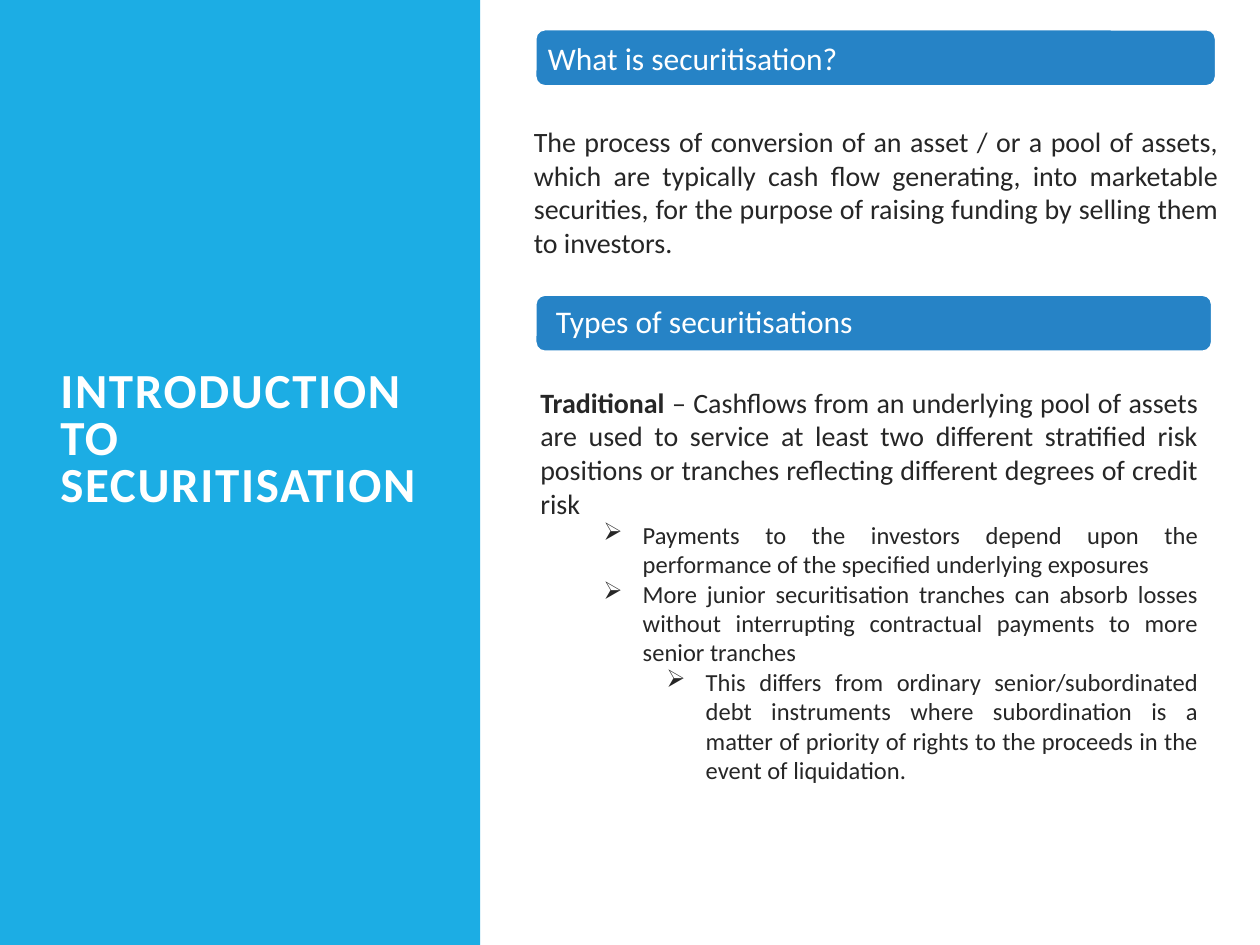
from dataclasses import dataclass

from lxml.etree import SubElement
from pptx import Presentation
from pptx.dml.color import RGBColor
from pptx.enum.shapes import MSO_SHAPE as Preset
from pptx.enum.text import MSO_ANCHOR as Anchor, PP_ALIGN as Align
from pptx.oxml.ns import qn
from pptx.util import Pt


@dataclass(frozen=True)
class Theme:
    font: str = "Calibri"
    panel: RGBColor = RGBColor(0x1C, 0xAD, 0xE4)
    bar: RGBColor = RGBColor(0x26, 0x83, 0xC6)
    light: RGBColor = RGBColor(0xFF, 0xFF, 0xFF)
    dark: RGBColor = RGBColor(0x26, 0x26, 0x26)
    title_size: int = 28
    heading_size: int = 18
    body_size: int = 16
    bullet_size: int = 14


THEME = Theme()
BULLET_HANG = 22.5

DEFINITION = (
    "The process of conversion of an asset / or a pool of assets, which are typically "
    "cash flow generating, into marketable securities, for the purpose of raising funding "
    "by selling them to investors."
)
TRADITIONAL = (
    "Traditional",
    " – Cashflows from an underlying pool of assets are used to service at least two "
    "different stratified risk positions or tranches reflecting different degrees of credit risk",
)
# Each bullet: level, left indent in points, text
BULLETS = [
    (1, 58.5, "Payments to the investors depend upon the performance of the specified "
              "underlying exposures"),
    (1, 58.5, "More junior securitisation tranches can absorb losses without interrupting "
              "contractual payments to more senior tranches"),
    (2, 94.5, "This differs from ordinary senior/subordinated debt instruments where "
              "subordination is a matter of priority of rights to the proceeds in the event "
              "of liquidation."),
]


def add_block(slide, preset, box, fill, line=None):
    shape = slide.shapes.add_shape(preset, *map(Pt, box))
    shape.shadow.inherit = False
    shape.fill.solid()
    shape.fill.fore_color.rgb = fill
    if line is None:
        shape.line.fill.background()
    else:
        shape.line.color.rgb = line
        shape.line.width = Pt(1.25)


def add_text_frame(slide, box, anchor=Anchor.TOP):
    text_frame = slide.shapes.add_textbox(*map(Pt, box)).text_frame
    text_frame.word_wrap = True
    text_frame.vertical_anchor = anchor
    return text_frame


def add_run(paragraph, text, size, color, bold=False):
    run = paragraph.add_run()
    run.text = text
    font = run.font
    font.name, font.size, font.bold = THEME.font, Pt(size), bold
    font.color.rgb = color
    return run


def set_bullet(paragraph, level, indent):
    paragraph.level = level
    properties = paragraph._p.get_or_add_pPr()
    properties.set("marL", str(Pt(indent)))
    properties.set("indent", str(-Pt(BULLET_HANG)))
    SubElement(properties, qn("a:buChar"), char="➢")


def add_title_panel(slide, box):
    left, top, width, height = box
    add_block(slide, Preset.RECTANGLE, box, THEME.panel)
    text_box = (left + 27.4, top + 33, width - 51, height - 101.5)
    paragraph = add_text_frame(slide, text_box, Anchor.MIDDLE).paragraphs[0]
    paragraph.line_spacing = 0.8
    run = add_run(paragraph, "INTRODUCTION TO SECURITISATION",
                  THEME.title_size, THEME.light, bold=True)
    run.font._element.set("spc", "100")


def add_heading_bar(slide, box, text, text_offset, line_spacing=1.0):
    left, top, width, height = box
    add_block(slide, Preset.ROUNDED_RECTANGLE, box, THEME.bar, THEME.light)
    text_box = (left + text_offset, top + 1.5, width - text_offset, height - 3)
    paragraph = add_text_frame(slide, text_box, Anchor.MIDDLE).paragraphs[0]
    paragraph.line_spacing = line_spacing
    add_run(paragraph, text, THEME.heading_size, THEME.light)


def add_definition(slide, box):
    paragraph = add_text_frame(slide, box).paragraphs[0]
    paragraph.alignment = Align.JUSTIFY
    add_run(paragraph, DEFINITION, THEME.body_size, THEME.dark)


def add_types(slide, box):
    text_frame = add_text_frame(slide, box)
    lead = text_frame.paragraphs[0]
    lead.alignment = Align.JUSTIFY
    term, explanation = TRADITIONAL
    add_run(lead, term, THEME.body_size, THEME.dark, bold=True)
    add_run(lead, explanation, THEME.body_size, THEME.dark)
    for level, indent, text in BULLETS:
        paragraph = text_frame.add_paragraph()
        paragraph.alignment = Align.JUSTIFY
        set_bullet(paragraph, level, indent)
        add_run(paragraph, text, THEME.bullet_size, THEME.dark)


def main():
    presentation = Presentation()
    presentation.slide_width, presentation.slide_height = Pt(720), Pt(540)
    slide = presentation.slides.add_slide(presentation.slide_layouts[6])
    add_title_panel(slide, (0, 0, 274.4, 540))
    add_heading_bar(slide, (306, 16.8, 388.8, 32.4), "What is securitisation?", 0)
    add_definition(slide, (298, 67.7, 405.4, 85))
    add_heading_bar(slide, (306, 168.5, 386.6, 32.4), "Types of securitisations", 4.6, 0.9)
    add_types(slide, (301.7, 216.7, 390.2, 237.6))
    presentation.save("out.pptx")


if __name__ == "__main__":
    main()
